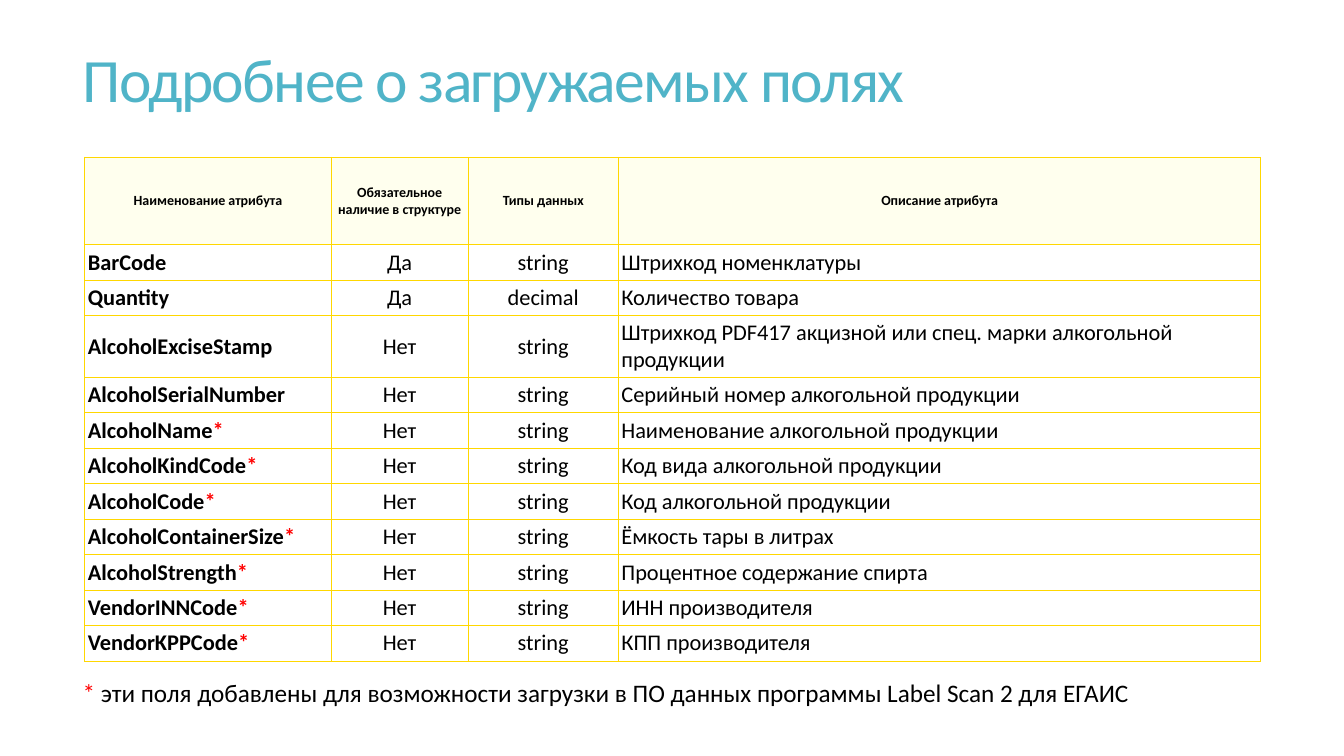
from dataclasses import dataclass

from lxml.etree import SubElement
from pptx import Presentation
from pptx.dml.color import RGBColor
from pptx.enum.text import MSO_ANCHOR, PP_ALIGN
from pptx.oxml import parse_xml
from pptx.oxml.ns import nsdecls, qn
from pptx.util import Pt


@dataclass(frozen=True)
class Theme:
    """Colours, type sizes and measures in points."""
    font: str = "Calibri"
    title: str = "50B4C8"
    ink: str = "000000"
    mark: str = "FF0000"
    header_fill: str = "FFFFEE"
    border: str = "FFD700"
    border_width: float = 0.75
    cell_inset: float = 2.25
    title_size: int = 44
    header_size: int = 10
    body_size: int = 16
    note_size: int = 18


HEADERS = ["Наименование атрибута", "Обязательное наличие в структуре",
           "Типы данных", "Описание атрибута"]
FIELDS = [
    ("BarCode", "Да", "string", "Штрихкод номенклатуры"),
    ("Quantity", "Да", "decimal", "Количество товара"),
    ("AlcoholExciseStamp", "Нет", "string",
     "Штрихкод PDF417 акцизной или спец. марки алкогольной продукции"),
    ("AlcoholSerialNumber", "Нет", "string", "Серийный номер алкогольной продукции"),
    ("AlcoholName*", "Нет", "string", "Наименование алкогольной продукции"),
    ("AlcoholKindCode*", "Нет", "string", "Код вида алкогольной продукции"),
    ("AlcoholCode*", "Нет", "string", "Код алкогольной продукции"),
    ("AlcoholContainerSize*", "Нет", "string", "Ёмкость тары в литрах"),
    ("AlcoholStrength*", "Нет", "string", "Процентное содержание спирта"),
    ("VendorINNCode*", "Нет", "string", "ИНН производителя"),
    ("VendorKPPCode*", "Нет", "string", "КПП производителя"),
]
NOTE = "* эти поля добавлены для возможности загрузки в ПО данных программы Label Scan 2 для ЕГАИС"
COLUMN_WIDTHS = [176, 98, 107.2, 459]
HEADER_HEIGHT, ROW_HEIGHT, TALL_ROW_HEIGHT = 62.6, 25.35, 43.9
TALL_ROW = 3


class SlideBuilder:
    """Draws styled elements on the current slide."""

    def __init__(self, page, theme):
        self.page = page
        self.theme = theme

    def paragraph(self, para, text, size, color, bold=False, align=PP_ALIGN.LEFT):
        """Fill a paragraph, setting an asterisk in the mark colour."""
        para.alignment = align
        para.font.name = self.theme.font
        para.font.size = Pt(size)
        para.font.bold = bold
        before, star, after = text.partition("*")
        if not star:
            para.font.color.rgb = RGBColor.from_string(color)
        for part in filter(None, (before, star, after)):
            span = para.add_run()
            span.text = part
            if star:
                shade = self.theme.mark if part == star else color
                span.font.color.rgb = RGBColor.from_string(shade)

    def text(self, left, top, width, height, text, size, color, anchor=MSO_ANCHOR.TOP):
        """Add a text box and return its paragraph."""
        box = self.page.shapes.add_textbox(Pt(left), Pt(top), Pt(width), Pt(height))
        box.text_frame.word_wrap = True
        box.text_frame.vertical_anchor = anchor
        para = box.text_frame.paragraphs[0]
        self.paragraph(para, text, size, color)
        return para

    def title(self, left, top, width, height, text):
        """Add the tightly spaced slide title."""
        para = self.text(left, top, width, height, text, self.theme.title_size,
                         self.theme.title, MSO_ANCHOR.MIDDLE)
        para.line_spacing = 0.85
        for span in para.runs:
            span._r.get_or_add_rPr().set("spc", "-120")

    def cell(self, cell, text, size, bold, align, fill=None):
        """Style and fill one table cell."""
        inset = Pt(self.theme.cell_inset)
        cell.margin_left = cell.margin_right = inset
        cell.margin_top = cell.margin_bottom = inset
        cell.vertical_anchor = MSO_ANCHOR.MIDDLE
        if fill:
            cell.fill.solid()
            cell.fill.fore_color.rgb = RGBColor.from_string(fill)
        else:
            cell.fill.background()
        self.paragraph(cell.text_frame.paragraphs[0], text, size, self.theme.ink, bold, align)
        self.borders(cell)

    def borders(self, cell):
        """Outline all four sides of a cell."""
        properties = cell._tc.get_or_add_tcPr()
        for index, side in enumerate(("lnL", "lnR", "lnT", "lnB")):
            line = parse_xml(f"<a:{side} {nsdecls('a')}/>")
            line.set("w", str(Pt(self.theme.border_width)))
            paint = SubElement(line, qn("a:solidFill"))
            SubElement(paint, qn("a:srgbClr")).set("val", self.theme.border)
            properties.insert(index, line)

    def table(self, left, top, widths, heights, headers, records):
        """Add the table with a tinted header row."""
        frame = self.page.shapes.add_table(len(heights), len(widths), Pt(left), Pt(top),
                                           Pt(sum(widths)), Pt(sum(heights)))
        table = frame.table
        table.first_row = table.horz_banding = False
        for column, width in zip(table.columns, widths):
            column.width = Pt(width)
        for row, height in zip(table.rows, heights):
            row.height = Pt(height)
        for column, header in enumerate(headers):
            self.cell(table.cell(0, column), header, self.theme.header_size, True,
                      PP_ALIGN.CENTER, self.theme.header_fill)
        for row, record in enumerate(records, 1):
            for column, value in enumerate(record):
                align = PP_ALIGN.CENTER if column in (1, 2) else PP_ALIGN.LEFT
                self.cell(table.cell(row, column), value, self.theme.body_size,
                          column == 0, align)


def main():
    """Build and save the slide."""
    deck = Presentation()
    deck.slide_width, deck.slide_height = Pt(960), Pt(540)
    theme = Theme()
    builder = SlideBuilder(deck.slides.add_slide(deck.slide_layouts[6]), theme)
    heights = [HEADER_HEIGHT] + [ROW_HEIGHT] * len(FIELDS)
    heights[TALL_ROW] = TALL_ROW_HEIGHT
    builder.title(52, 15, 850, 89, "Подробнее о загружаемых полях")
    builder.table(60.5, 112.3, COLUMN_WIDTHS, heights, HEADERS, FIELDS)
    builder.text(52, 480, 772, 29, NOTE, theme.note_size, theme.ink)
    deck.save("out.pptx")


if __name__ == "__main__":
    main()
